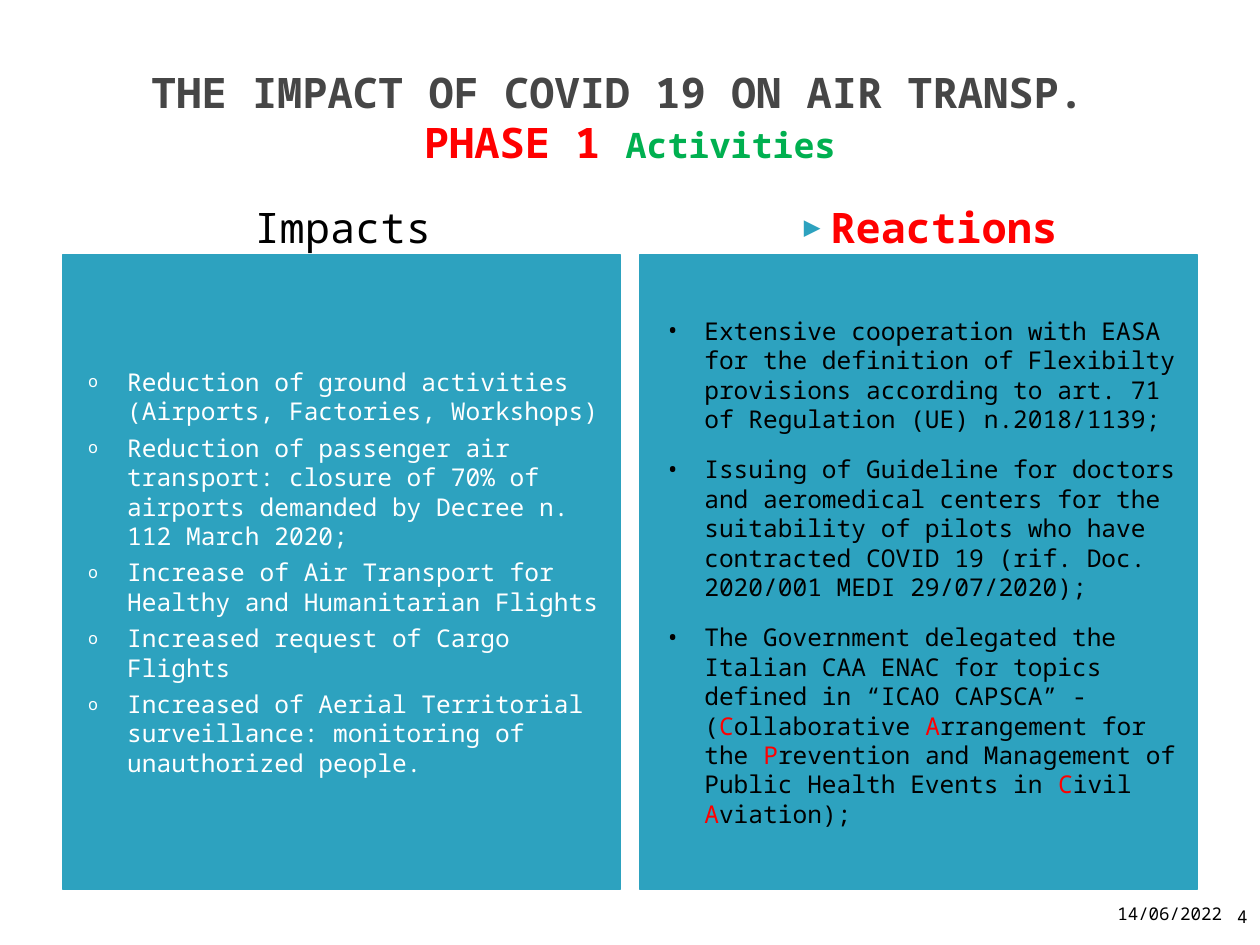
from lxml import etree
from pptx import Presentation
from pptx import util as u
from pptx.dml.color import RGBColor
from pptx.enum import shapes, text
from pptx.oxml.ns import qn

FONT = "Noto Sans Mono"
BLACK, WHITE, RED, TEAL = "000000", "FFFFFF", "FF0000", "2DA2BF"


def write(paragraph, runs, size, bold=False):
    for words, colour, *own_size in runs:
        run = paragraph.add_run()
        run.text = words
        run.font.name = FONT
        run.font.size = u.Pt(own_size[0] if own_size else size)
        run.font.bold = bold
        run.font.color.rgb = RGBColor.from_string(colour)


def indent(paragraph, left, hanging, bullet, colour=None, percent=100):
    props = paragraph._p.get_or_add_pPr()
    props.set("marL", str(u.Inches(left)))
    props.set("indent", str(u.Inches(-hanging)))
    if colour:
        tint = etree.SubElement(props, qn("a:buClr"))
        etree.SubElement(tint, qn("a:srgbClr"), val=colour)
    etree.SubElement(props, qn("a:buSzPct"), val=str(percent * 1000))
    etree.SubElement(props, qn("a:buFont"), typeface=FONT)
    etree.SubElement(props, qn("a:buChar"), char=bullet)


deck = Presentation()
deck.slide_width, deck.slide_height = u.Inches(10), u.Inches(7.5)
slide = deck.slides.add_slide(deck.slide_layouts[5])

margin, gap = 0.5, 0.16
column_width = (10 - 2 * margin - gap) / 2
columns = [margin, margin + column_width + gap]
heading_top, panel_top, panel_height = 1.55, 2.02, 5.04

title = slide.shapes.title
title.left, title.top = u.Inches(margin), u.Inches(0.3)
title.width, title.height = u.Inches(10 - 2 * margin), u.Inches(1.25)
title.text_frame.vertical_anchor = text.MSO_ANCHOR.MIDDLE
title.text_frame.word_wrap = True
title.text_frame.auto_size = text.MSO_AUTO_SIZE.NONE
headline = title.text_frame.paragraphs[0]
headline.alignment = text.PP_ALIGN.CENTER
write(headline, [
    ("THE IMPACT OF COVID 19 ON AIR TRANSP.  ", "464646"),
    ("PHASE 1 ", RED),
    ("Activities", "00B050", 20),
], 24, True)

impacts = [[(words, WHITE)] for words in (
    "Reduction of ground activities (Airports, Factories, Workshops)",
    "Reduction of passenger air transport: closure of 70% of airports demanded by Decree n. 112 March 2020;",
    "Increase of Air Transport for Healthy and Humanitarian Flights",
    "Increased request of Cargo Flights",
    "Increased of Aerial Territorial surveillance: monitoring of unauthorized people.",
)]
reactions = [
    [("Extensive cooperation with EASA for the definition of Flexibilty provisions "
      "according to art. 71 of Regulation (UE) n.2018/1139;", BLACK)],
    [("Issuing of Guideline for doctors and aeromedical centers for the suitability of pilots "
      "who have contracted COVID 19 (rif. Doc. 2020/001 MEDI 29/07/2020);", BLACK)],
    [("The Government delegated the Italian CAA ENAC for topics defined in “ICAO CAPSCA” - (", BLACK),
     ("C", RED), ("ollaborative ", BLACK),
     ("A", RED), ("rrangement for the ", BLACK),
     ("P", RED), ("revention and Management of Public Health Events in ", BLACK),
     ("C", RED), ("ivil ", BLACK),
     ("A", RED), ("viation);", BLACK)],
]

panels = [(impacts, 4, ("o", WHITE, 68)), (reactions, 12, ("•",))]
for left, (points, space, bullet) in zip(columns, panels):
    panel = slide.shapes.add_shape(
        shapes.MSO_SHAPE.RECTANGLE, u.Inches(left), u.Inches(panel_top),
        u.Inches(column_width), u.Inches(panel_height))
    panel.shadow.inherit = False
    panel.fill.solid()
    panel.fill.fore_color.rgb = RGBColor.from_string(TEAL)
    panel.line.color.rgb = RGBColor.from_string(TEAL)
    panel.line.width = u.Pt(0.75)
    frame = panel.text_frame
    frame.word_wrap = True
    frame.vertical_anchor = text.MSO_ANCHOR.MIDDLE
    frame.margin_left = u.Inches(0.2)
    for number, runs in enumerate(points):
        point = frame.add_paragraph() if number else frame.paragraphs[0]
        indent(point, 0.31, 0.31, *bullet)
        point.alignment = text.PP_ALIGN.LEFT
        if number:
            point.space_before = u.Pt(space)
        write(point, runs, 14)

top, bottom = text.MSO_ANCHOR.TOP, text.MSO_ANCHOR.BOTTOM
left_side, centre, right_side = text.PP_ALIGN.LEFT, text.PP_ALIGN.CENTER, text.PP_ALIGN.RIGHT
labels = [
    ("Impacts\t", columns[0], heading_top, column_width, 0.39, top, centre, 24, BLACK),
    ("Reactions", columns[1], heading_top, column_width, 0.47, top, centre, 24, RED),
    ("14/06/2022", 8.77, 6.98, 1.23, 0.4, bottom, left_side, 10, BLACK),
    ("4", 9.6, 7.01, 0.4, 0.4, bottom, right_side, 10, BLACK),
]
for words, left, y, width, height, anchor, align, size, colour in labels:
    label = slide.shapes.add_textbox(u.Inches(left), u.Inches(y), u.Inches(width), u.Inches(height))
    label.text_frame.word_wrap = True
    label.text_frame.vertical_anchor = anchor
    line = label.text_frame.paragraphs[0]
    if words == "Reactions":
        indent(line, 0.4, 0.28, "▶", TEAL, 68)
    elif align == centre:
        line._p.get_or_add_pPr().set("marL", str(u.Inches(0.12)))
    line.alignment = align
    write(line, [(words, colour)], size, colour == RED)

deck.save("out.pptx")
